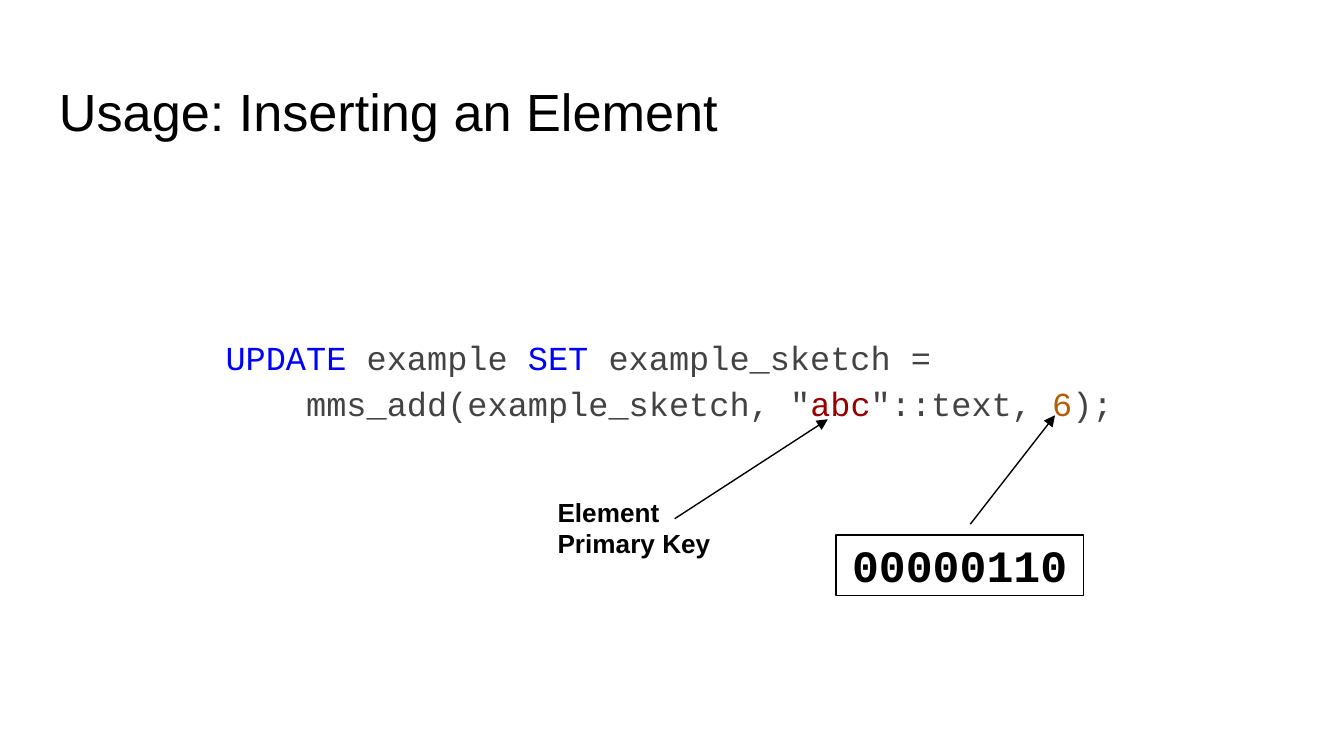
import pptx
import pptx.util
import pptx.dml.color
import pptx.enum.shapes
import pptx.enum.text
import pptx.oxml.ns
import lxml.etree

Pt = pptx.util.Pt
deck = pptx.Presentation()
deck.slide_width = pptx.util.Inches(10)
deck.slide_height = deck.slide_width * 9 // 16
cell = deck.slide_width / 100
slide = deck.slides.add_slide(deck.slide_layouts[6])
shapes = slide.shapes

hues = {"ink": "000000", "code": "434343", "word": "0000FF",
        "text": "980000", "digit": "B45F06"}
sans, mono = "Arial", "Courier New"


def style(run, font, size, hue, bold=False):
    run.font.name = font
    run.font.size = Pt(size)
    run.font.bold = bold
    run.font.color.rgb = pptx.dml.color.RGBColor.from_string(hues[hue])


def label(spot, words=""):
    box = shapes.add_textbox(*[round(n * cell) for n in spot])
    frame = box.text_frame
    frame.word_wrap = True
    frame.margin_left = frame.margin_right = round(cell)
    frame.margin_top = frame.margin_bottom = round(cell)
    frame.text = words
    return frame.paragraphs[0]


title = label((3.4, 4.9, 93.2, 6.3), "Usage: Inserting an Element")
style(title.runs[0], sans, 28, "ink")

lines = [
    [("UPDATE ", "word"), ("example ", "code"), ("SET", "word"),
     (" example_sketch =", "code")],
    [("mms_add(example_sketch, \"", "code"), ("abc", "text"),
     ("\"::text, ", "code"), ("6", "digit"), (");", "code")],
]
query = label((15.8, 23.6, 68.4, 9))
query.line_spacing = 1.15
query.space_after = Pt(16)
inset = round(6 * cell)
query._p.get_or_add_pPr().set("marL", str(inset))
query._p.get_or_add_pPr().set("indent", str(-inset))
for row, parts in enumerate(lines):
    if row:
        query.add_line_break()
    for words, hue in parts:
        run = query.add_run()
        run.text = words
        style(run, mono, 18, hue)

first, second = (72.2, 39, 78.5, 30.9), (50.2, 38.6, 61.6, 31.2)
for ends in (first, second):
    arrow = shapes.add_connector(pptx.enum.shapes.MSO_CONNECTOR.STRAIGHT,
                                 *[round(n * cell) for n in ends])
    arrow.line.width = Pt(0.75)
    arrow.line.color.rgb = pptx.dml.color.RGBColor.from_string(hues["ink"])
    tail = lxml.etree.SubElement(arrow.line._get_or_add_ln(),
                                 pptx.oxml.ns.qn("a:tailEnd"))
    tail.set("type", "triangle")
    lxml.etree.SubElement(arrow._element.spPr, pptx.oxml.ns.qn("a:effectLst"))

bits = label((60.3, 39, 22.2, 4.5), "00000110")
bits.alignment = pptx.enum.text.PP_ALIGN.CENTER
style(bits.runs[0], mono, 24, "ink", True)

frame = shapes.add_shape(pptx.enum.shapes.MSO_SHAPE.RECTANGLE,
                         *[round(n * cell) for n in (62.2, 39.8, 18.4, 4.5)])
frame.shadow.inherit = False
frame.fill.background()
frame.line.width = Pt(0.75)
frame.line.color.rgb = pptx.dml.color.RGBColor.from_string(hues["ink"])

key = label((40.5, 35.9, 13.8, 6.3), "Element Primary Key")
style(key.runs[0], sans, 14, "ink", True)

deck.save("out.pptx")
